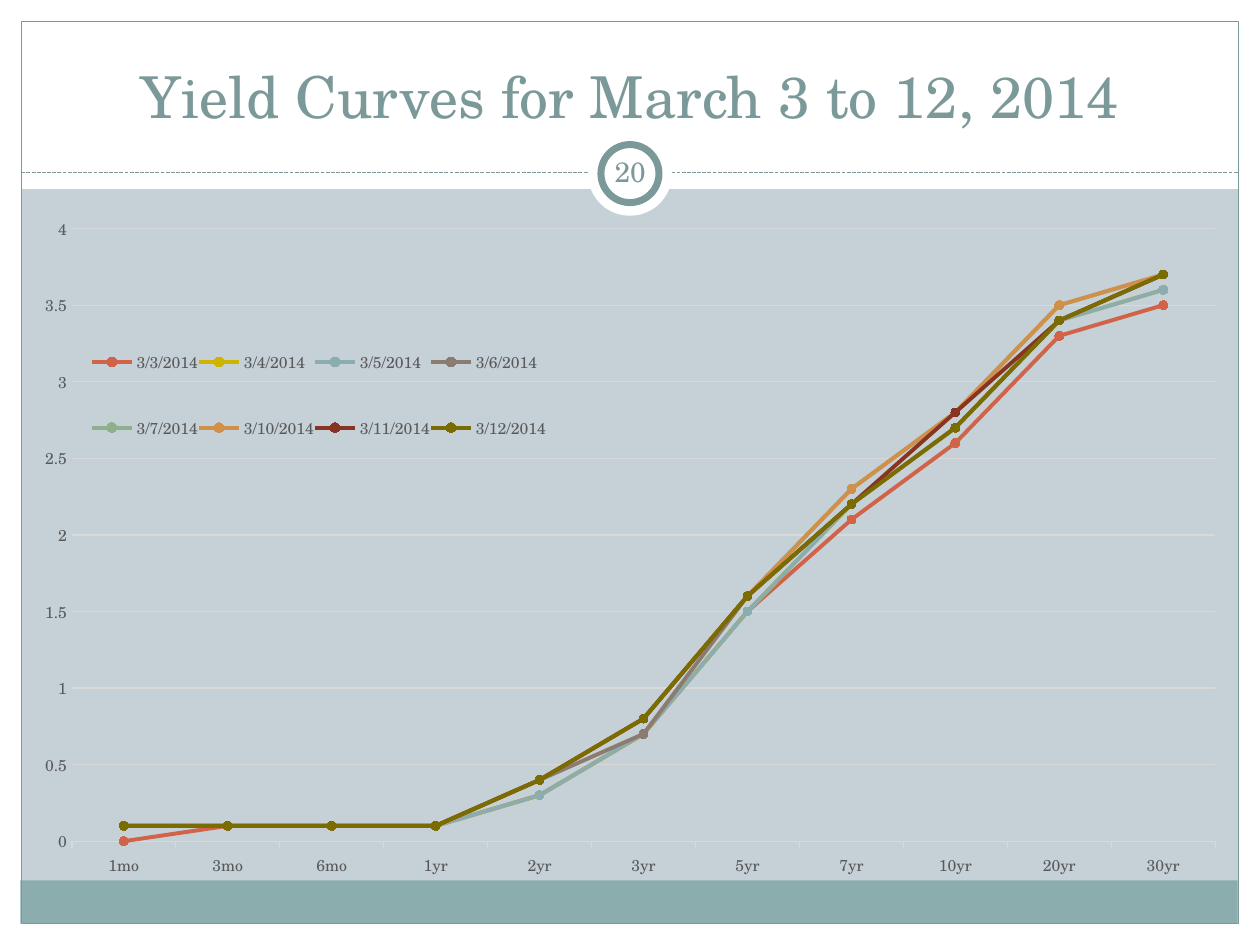
from dataclasses import dataclass

from lxml.etree import SubElement
from pptx import Presentation
from pptx.chart.data import CategoryChartData
from pptx.dml.color import RGBColor
from pptx.enum.chart import XL_CHART_TYPE, XL_LEGEND_POSITION, XL_MARKER_STYLE, XL_TICK_MARK
from pptx.enum.dml import MSO_LINE
from pptx.enum.shapes import MSO_CONNECTOR, MSO_SHAPE
from pptx.enum.text import MSO_ANCHOR, PP_ALIGN
from pptx.oxml import parse_xml
from pptx.oxml.ns import nsdecls, qn
from pptx.util import Cm, Pt


@dataclass(frozen=True)
class Theme:
    font: str = "TeX Gyre Schola"
    background: str = "C5D1D7"
    white: str = "FFFFFF"
    band: str = "8CADAE"
    accent: str = "7C999A"
    label: str = "595959"
    grid: str = "D9D9D9"
    series: tuple = ("D16349", "CCB400", "8CADAE", "8C7B70",
                     "8FB08C", "D19049", "873522", "7A6C00")
    title_size: float = 33
    number_size: float = 16
    chart_size: float = 9
    thin: float = 0.75
    ring: float = 4
    curve: float = 2.25
    marker: int = 5


THEME = Theme()
WIDTH, HEIGHT, MARGIN = 25.4, 19.05, 0.43
HEADER = 3.81
RULE_Y = 3.48
CHART_WIDTH, CHART_HEIGHT = 24.56, 14.76

MATURITIES = ("1mo", "3mo", "6mo", "1yr", "2yr", "3yr",
              "5yr", "7yr", "10yr", "20yr", "30yr")
YIELDS = {
    "3/3/2014": (0, 0.1, 0.1, 0.1, 0.3, 0.7, 1.5, 2.1, 2.6, 3.3, 3.5),
    "3/4/2014": (0.1, 0.1, 0.1, 0.1, 0.3, 0.7, 1.5, 2.2, 2.7, 3.4, 3.6),
    "3/5/2014": (0.1, 0.1, 0.1, 0.1, 0.3, 0.7, 1.5, 2.2, 2.7, 3.4, 3.6),
    "3/6/2014": (0.1, 0.1, 0.1, 0.1, 0.4, 0.7, 1.6, 2.2, 2.7, 3.4, 3.7),
    "3/7/2014": (0.1, 0.1, 0.1, 0.1, 0.4, 0.8, 1.6, 2.3, 2.8, 3.5, 3.7),
    "3/10/2014": (0.1, 0.1, 0.1, 0.1, 0.4, 0.8, 1.6, 2.3, 2.8, 3.5, 3.7),
    "3/11/2014": (0.1, 0.1, 0.1, 0.1, 0.4, 0.8, 1.6, 2.2, 2.8, 3.4, 3.7),
    "3/12/2014": (0.1, 0.1, 0.1, 0.1, 0.4, 0.8, 1.6, 2.2, 2.7, 3.4, 3.7),
}


def color(value):
    return RGBColor.from_string(value)


def style_line(line, value, width):
    line.color.rgb = color(value)
    line.width = Pt(width)


def style_font(font, size, value):
    font.name = THEME.font
    font.size = Pt(size)
    font.color.rgb = color(value)


def add_panel(page, kind, bounds, fill=None, line=None, width=THEME.thin):
    panel = page.shapes.add_shape(kind, *map(Cm, bounds))
    panel.shadow.inherit = False
    if fill:
        panel.fill.solid()
        panel.fill.fore_color.rgb = color(fill)
    else:
        panel.fill.background()
    if line:
        style_line(panel.line, line, width)
    else:
        panel.line.fill.background()


def add_disc(page, diameter, line=None):
    bounds = ((WIDTH - diameter) / 2, RULE_Y + 0.02 - diameter / 2, diameter, diameter)
    add_panel(page, MSO_SHAPE.OVAL, bounds, THEME.white, line, THEME.ring)


def add_rule(page):
    rule = page.shapes.add_connector(
        MSO_CONNECTOR.STRAIGHT, Cm(MARGIN), Cm(RULE_Y), Cm(WIDTH - MARGIN), Cm(RULE_Y))
    style_line(rule.line, THEME.accent, THEME.thin)
    rule.line.dash_style = MSO_LINE.SQUARE_DOT
    SubElement(rule._element.spPr, qn("a:effectLst"))


def add_label(page, bounds, text, size, anchor, inset):
    box = page.shapes.add_textbox(*map(Cm, bounds))
    frame = box.text_frame
    frame.word_wrap = True
    frame.vertical_anchor = anchor
    frame.margin_left = frame.margin_right = Cm(inset)
    frame.margin_top = frame.margin_bottom = Cm(0.13)
    para = frame.paragraphs[0]
    para.alignment = PP_ALIGN.CENTER
    span = para.add_run()
    span.text = text
    style_font(span.font, size, THEME.accent)


def add_frame(page):
    page.background.fill.solid()
    page.background.fill.fore_color.rgb = color(THEME.background)
    inner_width = WIDTH - 2 * MARGIN
    for bounds in (
        (0, HEIGHT - MARGIN, WIDTH, MARGIN),
        (0, 0, WIDTH, HEADER),
        (0, 0, MARGIN, HEIGHT),
        (WIDTH - MARGIN, 0, MARGIN, HEIGHT),
    ):
        add_panel(page, MSO_SHAPE.RECTANGLE, bounds, THEME.white)
    add_panel(page, MSO_SHAPE.RECTANGLE, (0.41, 17.75, inner_width, 0.87), THEME.band)
    add_panel(page, MSO_SHAPE.RECTANGLE,
              (MARGIN, MARGIN, inner_width, HEIGHT - 2 * MARGIN), line=THEME.accent)
    add_rule(page)
    add_disc(page, 1.7)
    add_disc(page, 1.17, THEME.accent)


def place(parent, index, left, top, width, height, inner=False):
    for old in parent.findall(qn("c:layout")):
        parent.remove(old)
    target = '<c:layoutTarget val="inner"/>' if inner else ""
    parent.insert(index, parse_xml(
        f'<c:layout {nsdecls("c")}><c:manualLayout>{target}'
        '<c:xMode val="edge"/><c:yMode val="edge"/>'
        f'<c:x val="{left / CHART_WIDTH}"/><c:y val="{top / CHART_HEIGHT}"/>'
        f'<c:w val="{width / CHART_WIDTH}"/><c:h val="{height / CHART_HEIGHT}"/>'
        '</c:manualLayout></c:layout>'))


def style_axes(chart):
    months, rates = chart.category_axis, chart.value_axis
    for axis in (months, rates):
        style_font(axis.tick_labels.font, THEME.chart_size, THEME.label)
        axis.minor_tick_mark = XL_TICK_MARK.NONE
    months.major_tick_mark = XL_TICK_MARK.OUTSIDE
    style_line(months.format.line, THEME.grid, THEME.thin)
    rates.major_tick_mark = XL_TICK_MARK.NONE
    rates.format.line.fill.background()
    rates.minimum_scale, rates.maximum_scale, rates.major_unit = 0, 4, 0.5
    style_line(rates.major_gridlines.format.line, THEME.grid, THEME.thin)


def style_curve(series, value):
    series.smooth = False
    style_line(series.format.line, value, THEME.curve)
    marker = series.marker
    marker.style = XL_MARKER_STYLE.CIRCLE
    marker.size = THEME.marker
    marker.format.fill.solid()
    marker.format.fill.fore_color.rgb = color(value)
    style_line(marker.format.line, value, THEME.thin)


def add_yield_chart(page, left, top):
    data = CategoryChartData(number_format="General")
    data.categories = MATURITIES
    for day, rates in YIELDS.items():
        data.add_series(day, rates)
    bounds = (left, top, CHART_WIDTH, CHART_HEIGHT)
    chart = page.shapes.add_chart(
        XL_CHART_TYPE.LINE_MARKERS, *map(Cm, bounds), data).chart
    chart.has_title = False
    style_font(chart.font, THEME.chart_size, THEME.label)
    chart.has_legend = True
    chart.legend.position = XL_LEGEND_POSITION.BOTTOM
    chart.legend.include_in_layout = False
    style_font(chart.legend.font, THEME.chart_size, THEME.label)
    style_axes(chart)
    chart.plots[0].vary_by_categories = False
    for series, value in zip(chart.plots[0].series, THEME.series):
        style_curve(series, value)
    place(chart._chartSpace.chart.plotArea, 0, 1.02, 0.52, 23.05, 12.35, inner=True)
    place(chart.legend._element, 1, 1.4, 2.12, 9.2, 3.5)


def main():
    deck = Presentation()
    deck.slide_width, deck.slide_height = Cm(WIDTH), Cm(HEIGHT)
    page = deck.slides.add_slide(deck.slide_layouts[6])
    add_frame(page)
    add_label(page, (0.85, 0.64, 23.7, 2.12), "Yield Curves for March 3 to 12, 2014",
              THEME.title_size, MSO_ANCHOR.BOTTOM, 0.25)
    add_label(page, (12.07, 2.85, 1.27, 1.22), "20",
              THEME.number_size, MSO_ANCHOR.MIDDLE, 0.13)
    add_yield_chart(page, 0.43, 4.09)
    deck.save("out.pptx")


if __name__ == "__main__":
    main()
